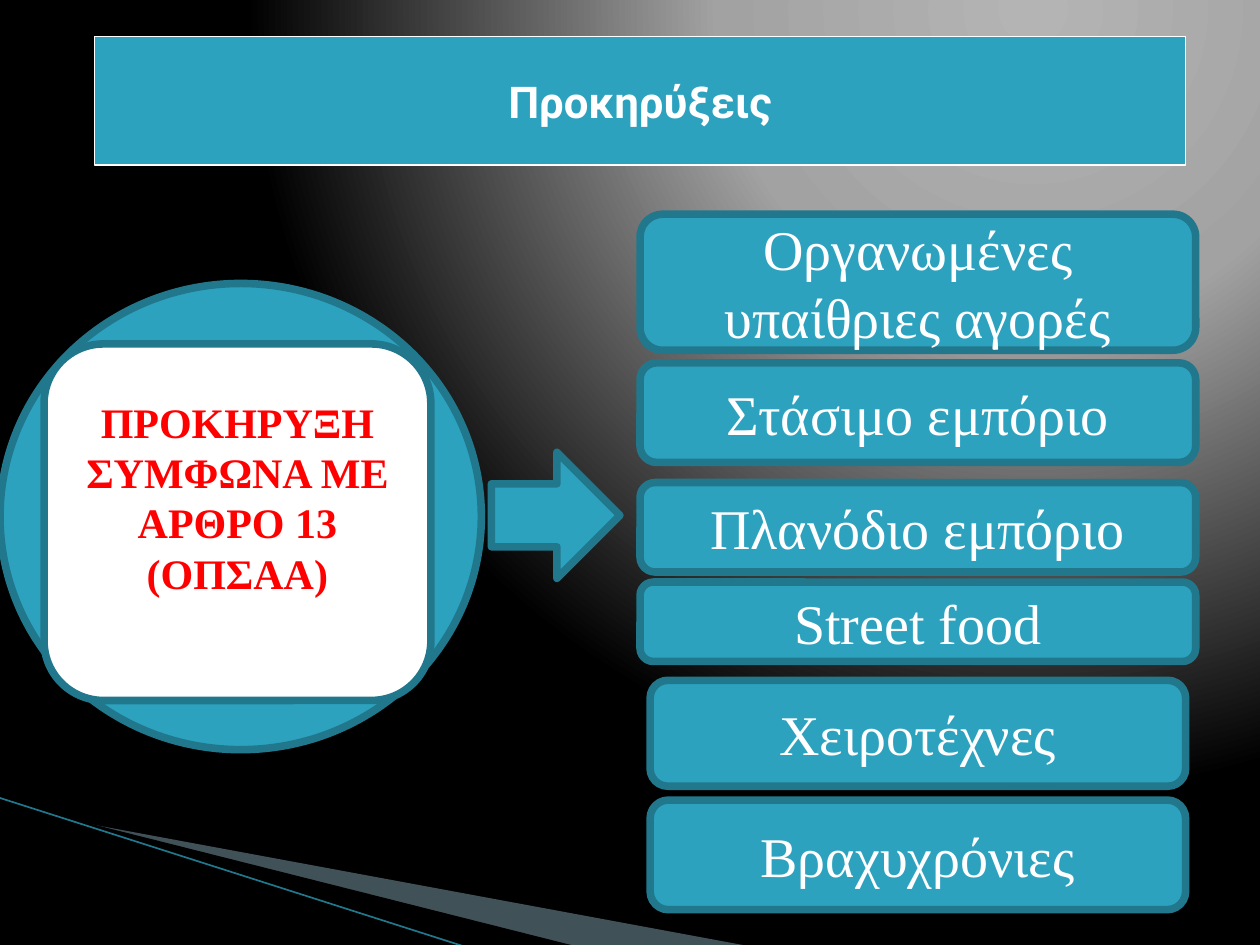
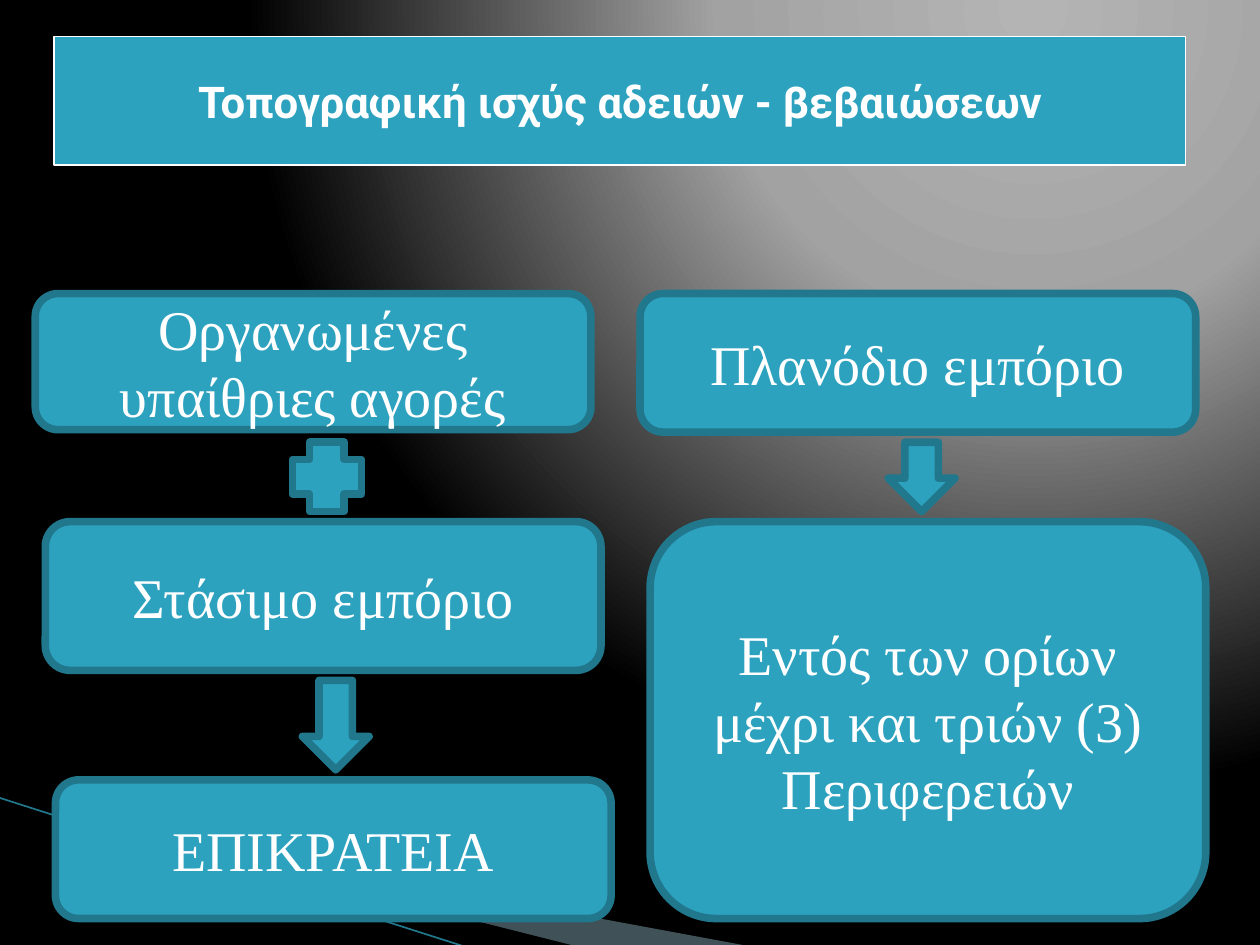
from dataclasses import dataclass

from lxml import etree
from pptx import Presentation
from pptx.dml.color import RGBColor
from pptx.enum.shapes import MSO_CONNECTOR, MSO_SHAPE
from pptx.enum.text import MSO_ANCHOR, PP_ALIGN
from pptx.oxml import parse_xml
from pptx.oxml.ns import nsdecls, qn
from pptx.slide import Slide
from pptx.util import Inches, Pt

ROUNDED = MSO_SHAPE.ROUNDED_RECTANGLE
RECTANGLE = MSO_SHAPE.RECTANGLE
ELLIPSE = MSO_SHAPE.OVAL
PLUS = MSO_SHAPE.CROSS
ARROW_RIGHT = MSO_SHAPE.RIGHT_ARROW
ARROW_DOWN = MSO_SHAPE.DOWN_ARROW
STRAIGHT = MSO_CONNECTOR.STRAIGHT
MIDDLE = MSO_ANCHOR.MIDDLE
CENTER = PP_ALIGN.CENTER

COLORS = {
    "teal": "2DA2BF",
    "dark_teal": "21788D",
    "white": "FFFFFF",
    "black": "000000",
    "red": "FF0000",
    "wedge": "A0CBDC",
}
BACKDROP_STOPS = {0: "B4B4B4", 40: "A2A2A2", 100: "000000"}

FORMATS = {
    "label": {"name": "Times New Roman", "size": Pt(32), "bold": False},
    "notice": {"name": "Times New Roman", "size": Pt(24), "bold": True},
    "title": {"name": "Roboto", "size": Pt(25), "bold": True},
}

WEDGE = [(0.55, 6.51), (5.95, 7.51), (4.56, 7.51), (0.55, 6.5)]
WEDGE_SHADE = [(0.53, 6.49), (4.57, 7.51), (3.72, 7.52), (0.54, 6.5)]
CATEGORY_WIDTH = 4.41
LEFT_COLUMN, RIGHT_COLUMN = 0.28, 5.08
INDENT = 0.08


@dataclass(frozen=True)
class Block:
    left: float
    top: float
    width: float
    height: float
    lines: tuple[str, ...] = ()
    geometry: int = ROUNDED
    fill: str = "teal"
    line: str = "dark_teal"
    line_width: float = 4.33
    style: str = "label"
    ink: str = "white"
    bottom_inset: float = 0.05


def category(left: float, top: float, height: float, label: str,
             width: float = CATEGORY_WIDTH) -> Block:
    return Block(left, top, width, height, (label,))


def title_band(left: float, width: float, title: str) -> Block:
    return Block(left, 0.29, width, 1.02, (title,), RECTANGLE,
                 line="white", line_width=1, style="title")


def rgb(color: str) -> RGBColor:
    return RGBColor.from_string(COLORS[color])


def draw_block(slide: Slide, block: Block) -> None:
    place = map(Inches, (block.left, block.top, block.width, block.height))
    shape = slide.shapes.add_shape(block.geometry, *place)
    shape.shadow.inherit = False
    shape.fill.solid()
    shape.fill.fore_color.rgb = rgb(block.fill)
    shape.line.color.rgb = rgb(block.line)
    shape.line.width = Pt(block.line_width)
    frame = shape.text_frame
    frame.word_wrap = True
    frame.vertical_anchor = MIDDLE
    frame.margin_bottom = Inches(block.bottom_inset)
    for index, text in enumerate(block.lines):
        paragraph = frame.add_paragraph() if index else frame.paragraphs[0]
        paragraph.alignment = CENTER
        run = paragraph.add_run()
        run.text = text
        run.font.color.rgb = rgb(block.ink)
        for attribute, value in FORMATS[block.style].items():
            setattr(run.font, attribute, value)


def draw_wedge(slide: Slide, corners: list[tuple[float, float]],
               color: str, opacity: int) -> None:
    points = [(Inches(x), Inches(y)) for x, y in corners]
    builder = slide.shapes.build_freeform(*points[0])
    builder.add_line_segments(points[1:])
    wedge = builder.convert_to_shape()
    wedge.shadow.inherit = False
    wedge.fill.solid()
    wedge.fill.fore_color.rgb = rgb(color)
    wedge.line.fill.background()
    hue = wedge.element.spPr.find(qn("a:solidFill")).find(qn("a:srgbClr"))
    etree.SubElement(hue, qn("a:alpha"), val=str(opacity * 1000))


def draw_corner(slide: Slide) -> None:
    draw_wedge(slide, WEDGE, "wedge", 40)
    draw_wedge(slide, WEDGE_SHADE, "black", 100)
    edge = slide.shapes.add_connector(
        STRAIGHT, Inches(-0.01), Inches(6.33), Inches(3.71), Inches(7.52))
    edge.line.color.rgb = rgb("dark_teal")
    edge.line.width = Pt(0.95)
    etree.SubElement(edge.element.spPr, qn("a:effectLst"))


def set_backdrop(slide: Slide) -> None:
    slide.background.fill.solid()
    solid = slide.element.find(".//" + qn("p:bgPr")).find(qn("a:solidFill"))
    stops = "".join(
        f'<a:gs pos="{position * 1000}"><a:srgbClr val="{color}"/></a:gs>'
        for position, color in BACKDROP_STOPS.items())
    gradient = parse_xml(
        f'<a:gradFill rotWithShape="1" {nsdecls("a")}><a:gsLst>{stops}</a:gsLst>'
        '<a:path path="circle"><a:fillToRect l="65000" t="0" r="0" b="98000"/>'
        '</a:path></a:gradFill>')
    solid.getparent().replace(solid, gradient)


ANNOUNCEMENTS = [
    Block(3.9, 3.59, 1.02, 1, geometry=ARROW_RIGHT),
    category(RIGHT_COLUMN, 3.83, 0.71, "Πλανόδιο εμπόριο"),
    category(RIGHT_COLUMN, 1.7, 1.08, "Οργανωμένες υπαίθριες αγορές"),
    category(RIGHT_COLUMN, 2.88, 0.79, "Στάσιμο εμπόριο"),
    Block(0, 2.25, 3.82, 3.7, geometry=ELLIPSE),
    Block(0.35, 2.73, 3.07, 2.83, ("ΠΡΟΚΗΡΥΞΗ ΣΥΜΦΩΝΑ ΜΕ ΑΡΘΡΟ 13", "(ΟΠΣΑΑ)"),
          fill="white", style="notice", ink="red", bottom_inset=0.45),
    category(RIGHT_COLUMN, 4.62, 0.63, "Street food"),
    category(RIGHT_COLUMN + INDENT, 5.4, 0.84, "Χειροτέχνες", 4.25),
    category(RIGHT_COLUMN + INDENT, 6.35, 0.87, "Βραχυχρόνιες", 4.25),
    title_band(0.75, 8.66, "Προκηρύξεις"),
]

TERRITORIAL_VALIDITY = [
    category(RIGHT_COLUMN, 2.33, 1.1, "Πλανόδιο εμπόριο"),
    category(LEFT_COLUMN, 2.33, 1.08, "Οργανωμένες υπαίθριες αγορές"),
    category(LEFT_COLUMN + INDENT, 4.14, 1.18, "Στάσιμο εμπόριο"),
    Block(2.32, 3.51, 0.55, 0.55, geometry=PLUS),
    Block(2.4, 5.4, 0.53, 0.71, geometry=ARROW_DOWN),
    category(LEFT_COLUMN + 2 * INDENT, 6.19, 1.1, "ΕΠΙΚΡΑΤΕΙΑ"),
    Block(7.05, 3.51, 0.53, 0.55, geometry=ARROW_DOWN),
    category(RIGHT_COLUMN + INDENT, 4.14, 3.15,
             "Εντός των ορίων μέχρι και τριών (3) Περιφερειών"),
    title_band(0.43, 8.98, "Τοπογραφική ισχύς αδειών - βεβαιώσεων"),
]


def main() -> None:
    deck = Presentation()
    deck.slide_width = Inches(10)
    deck.slide_height = Inches(7.5)
    blank = deck.slide_layouts[6]
    for blocks in (ANNOUNCEMENTS, TERRITORIAL_VALIDITY):
        slide = deck.slides.add_slide(blank)
        set_backdrop(slide)
        draw_corner(slide)
        for block in blocks:
            draw_block(slide, block)
    deck.save("out.pptx")


if __name__ == "__main__":
    main()
